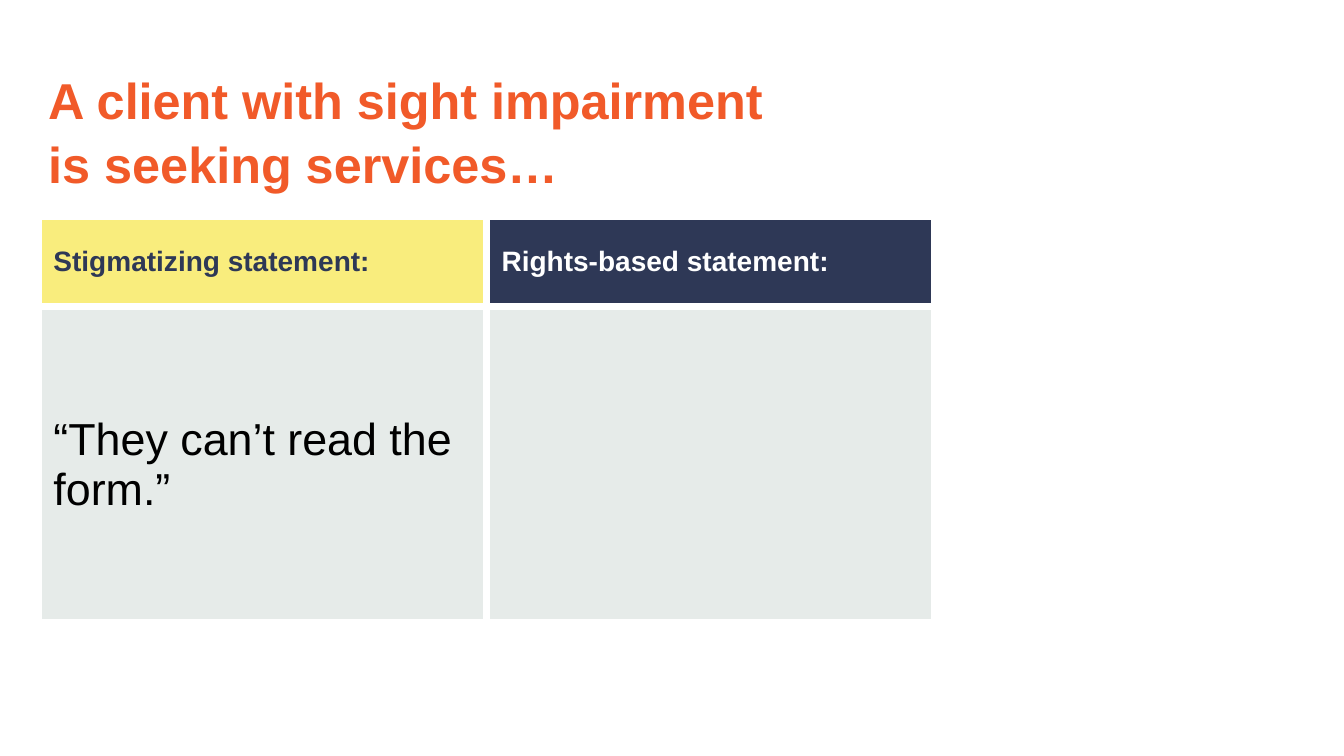
import pptx
import pptx.util
import pptx.dml.color
import pptx.enum.text
import pptx.oxml
import pptx.oxml.ns
from pptx.util import Inches

COLORS = {
    "title": "F15A29",
    "navy": "2E3856",
    "yellow": "F9ED7D",
    "panel": "E6EBE9",
    "white": "FFFFFF",
    "black": "000000",
}


def rgb(name):
    return pptx.dml.color.RGBColor.from_string(COLORS[name])


def write(frame, text, size, color, bold=False, spacing=None):
    paragraph = frame.paragraphs[0]
    paragraph.line_spacing = spacing
    run = paragraph.add_run()
    run.text = text
    run.font.name = "Arial"
    run.font.size = pptx.util.Pt(size)
    run.font.bold = bold
    run.font.color.rgb = rgb(color)


class StatementSlide:
    def __init__(self, deck):
        self.slide = deck.slides.add_slide(deck.slide_layouts[6])
        self.border_width = pptx.util.Pt(6)
        self.title_inset = Inches(0.1)
        self.cell_inset = Inches(0.15)

    def set_insets(self, target, inset):
        target.margin_left = target.margin_right = inset
        target.margin_top = target.margin_bottom = inset

    def title(self, text, left, top, width, height):
        frame = self.slide.shapes.add_textbox(left, top, width, height).text_frame
        frame.word_wrap = True
        self.set_insets(frame, self.title_inset)
        write(frame, text, 36, "title", bold=True, spacing=1.07)

    def border(self, cell):
        """Draw white gaps on all four sides of a cell."""
        properties = cell._tc.get_or_add_tcPr()
        for position, side in enumerate(("lnL", "lnR", "lnT", "lnB")):
            line = pptx.oxml.parse_xml(
                f'<a:{side} {pptx.oxml.ns.nsdecls("a")} w="{self.border_width}">'
                f'<a:solidFill><a:srgbClr val="{COLORS["white"]}"/></a:solidFill>'
                f"</a:{side}>"
            )
            properties.insert(position, line)

    def table(self, rows, row_heights, left, top, width):
        """Each cell is a fill name and the keyword arguments of its text, if any."""
        columns = len(rows[0])
        grid = self.slide.shapes.add_table(
            len(rows), columns, left, top, width, sum(row_heights)
        ).table
        for row, height in zip(grid.rows, row_heights):
            row.height = height
        for r, row in enumerate(rows):
            for c, (fill, content) in enumerate(row):
                cell = grid.cell(r, c)
                cell.fill.solid()
                cell.fill.fore_color.rgb = rgb(fill)
                cell.vertical_anchor = pptx.enum.text.MSO_ANCHOR.MIDDLE
                self.set_insets(cell, self.cell_inset)
                self.border(cell)
                if content:
                    write(cell.text_frame, **content)


def main():
    deck = pptx.Presentation()
    deck.slide_width, deck.slide_height = Inches(13.33), Inches(7.5)
    page = StatementSlide(deck)
    left = Inches(0.38)
    page.title(
        "A client with sight impairment is seeking services…",
        left, Inches(0.54), Inches(7.62), Inches(1.45),
    )
    header = {"size": 20, "bold": True}
    statements = [
        [
            ("yellow", {"text": "Stigmatizing statement:", "color": "navy", **header}),
            ("navy", {"text": "Rights-based statement:", "color": "white", **header}),
        ],
        [
            ("panel", {"text": "“They can’t read the form.”", "size": 32, "color": "black"}),
            ("panel", None),
        ],
    ]
    page.table(
        statements, [Inches(0.89), Inches(3.14)], left, Inches(2.15), Inches(8.89)
    )
    deck.save("out.pptx")


if __name__ == "__main__":
    main()
